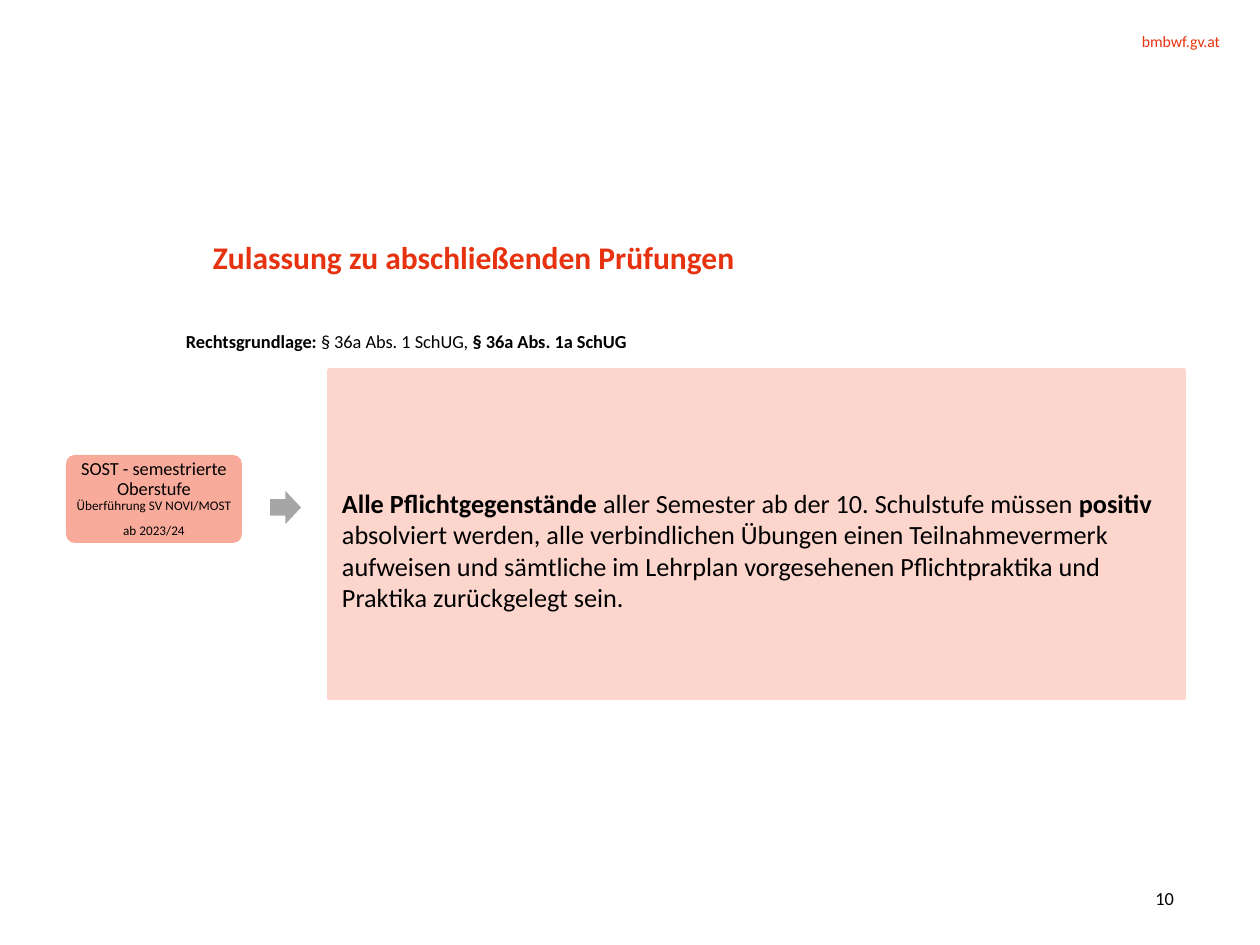
from pptx import Presentation
from pptx.dml.color import RGBColor
from pptx.enum.shapes import MSO_SHAPE as Shape
from pptx.enum.text import MSO_ANCHOR as Anchor, PP_ALIGN as Align
from pptx.util import Emu, Pt

SCALE = 914400 // 126  # EMU per px
FONT = "Calibri"
RED, BLACK, GREY = "E6320F", "000000", "A6A6A6"
ROSE, PALE = "F9AB9B", "FCD5CD"


def px(n):
    return Emu(n * SCALE)


def color(code):
    return RGBColor.from_string(code)


def set_frame(frame, insets=(0, 0, 0, 0), anchor=Anchor.TOP, wrap=True):
    frame.word_wrap = wrap
    frame.vertical_anchor = anchor
    (frame.margin_left, frame.margin_top,
     frame.margin_right, frame.margin_bottom) = map(px, insets)


def write(par, parts, size, ink=BLACK, align=Align.LEFT):
    """Fill a paragraph with (text, bold) parts."""
    par.alignment = align
    for text, bold in parts:
        run = par.add_run()
        run.text = text
        font = run.font
        font.name, font.size, font.bold = FONT, Pt(size), bold
        font.color.rgb = color(ink)


def add_text(slide, box, parts, size, ink=BLACK, align=Align.LEFT, **frame):
    label = slide.shapes.add_textbox(*map(px, box))
    set_frame(label.text_frame, **frame)
    write(label.text_frame.paragraphs[0], parts, size, ink, align)
    return label


def add_block(slide, kind, box, fill, line=None):
    block = slide.shapes.add_shape(kind, *map(px, box))
    block.shadow.inherit = False
    block.fill.solid()
    block.fill.fore_color.rgb = color(fill)
    if line:
        block.line.color.rgb = color(fill)
        block.line.width = Pt(line)
    else:
        block.line.fill.background()
    return block


def add_rule(slide):
    rule = add_block(slide, Shape.RECTANGLE, (329, 370, 855, 328), PALE, 2)
    # The deeper top inset sets the text below the middle
    set_frame(rule.text_frame, (13, 38, 13, 6), Anchor.MIDDLE)
    write(rule.text_frame.paragraphs[0], [
        ("Alle Pflichtgegenstände ", True),
        ("aller Semester ab der 10. Schulstufe müssen ", False),
        ("positiv", True),
        (" absolviert werden, alle verbindlichen Übungen einen "
         "Teilnahmevermerk aufweisen und sämtliche im Lehrplan vorgesehenen "
         "Pflichtpraktika und Praktika zurückgelegt sein.", False),
    ], 15)


def add_school(slide):
    card = add_block(slide, Shape.ROUNDED_RECTANGLE, (66, 455, 176, 88), ROSE)
    card.adjustments[0] = 0.1
    frame = card.text_frame
    set_frame(frame, (4, 4, 4, 4), Anchor.MIDDLE)
    lines = [("SOST - semestrierte Oberstufe", 10.5, 0),
             ("Überführung SV NOVI/MOST", 7.5, 6),
             ("ab 2023/24", 7.5, 0)]
    for i, (text, size, after) in enumerate(lines):
        par = frame.add_paragraph() if i else frame.paragraphs[0]
        write(par, [(text, False)], size, align=Align.CENTER)
        par.line_spacing = 0.9
        par.space_after = Pt(after)


def main():
    deck = Presentation()
    deck.slide_width, deck.slide_height = px(1260), px(945)
    slide = deck.slides.add_slide(deck.slide_layouts[6])

    # Header and page number
    add_text(slide, (916, 32, 304, 19), [("bmbwf.gv.at", False)], 9, RED,
             Align.RIGHT)
    add_text(slide, (1062, 880, 112, 37), [("10", False)], 10.5,
             align=Align.RIGHT, anchor=Anchor.MIDDLE)

    # Title and legal basis
    title = add_text(slide, (213, 236, 824, 86),
                     [("Zulassung zu abschließenden Prüfungen", True)],
                     18, RED, wrap=False)
    title.text_frame.paragraphs[0].line_spacing = Pt(22.5)
    add_text(slide, (173, 324, 488, 35), [
        ("Rechtsgrundlage: ", True),
        ("§ 36a Abs. 1 SchUG, ", False),
        ("§ 36a Abs. 1a SchUG", True),
    ], 10.5, insets=(13, 6, 13, 6))

    # School type, arrow and its rule
    add_school(slide)
    add_block(slide, Shape.RIGHT_ARROW, (270, 491, 31, 33), GREY)
    add_rule(slide)

    deck.save("out.pptx")


if __name__ == "__main__":
    main()
